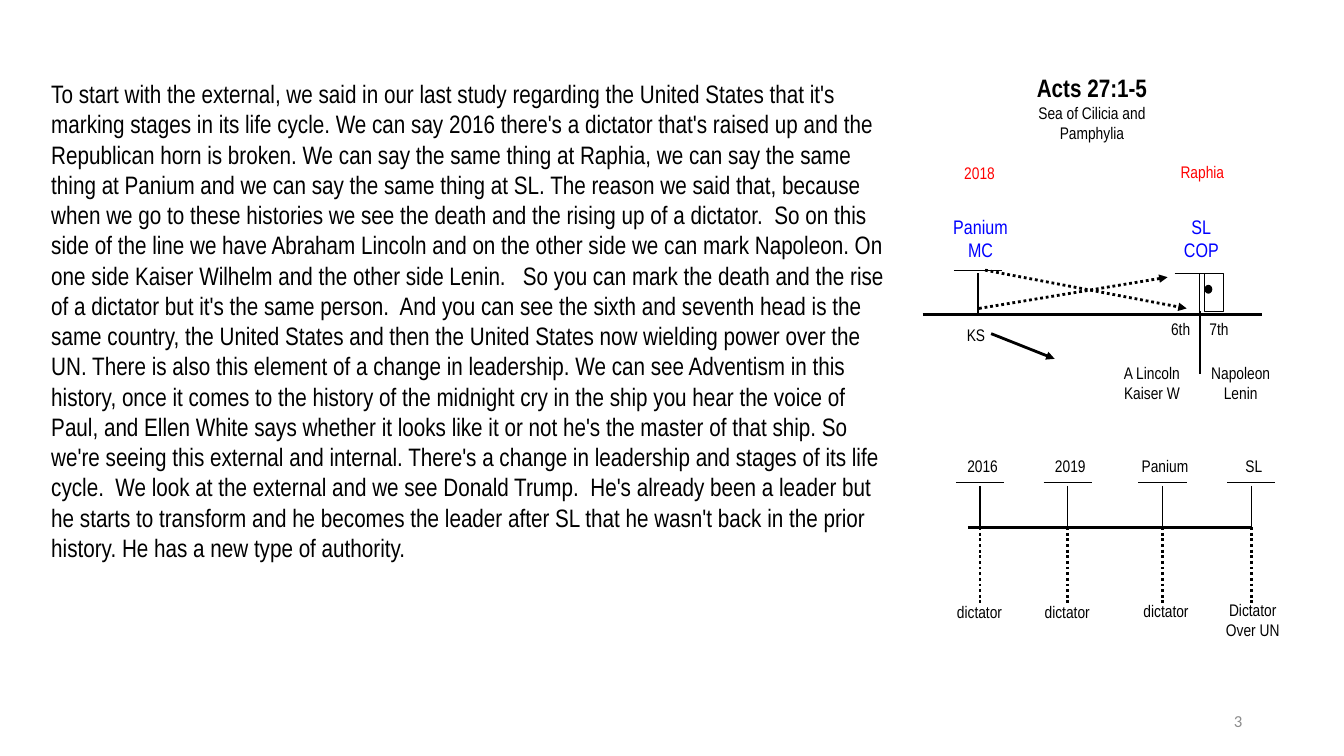
from lxml.etree import SubElement
from pptx import Presentation
from pptx.dml.color import RGBColor
from pptx.enum.dml import MSO_LINE
from pptx.enum.shapes import MSO_CONNECTOR, MSO_SHAPE
from pptx.enum.text import MSO_ANCHOR, PP_ALIGN
from pptx.oxml.ns import qn
from pptx.util import Inches, Pt

# Content
BODY = [
    "To start with the external, we said in our last study regarding the United States that it's",
    "marking stages in its life cycle. We can say 2016 there's a dictator that's raised up and the",
    "Republican horn is broken. We can say the same thing at Raphia, we can say the same thing at",
    "Panium and we can say the same thing at SL. The reason we said that, because when we go to",
    "these histories we see the death and the rising up of a dictator.  So on this side of the line",
    "we have Abraham Lincoln and on the other side we can mark Napoleon. On one side Kaiser Wilhelm",
    "and the other side Lenin.   So you can mark the death and the rise of a dictator but it's the",
    "same person.  And you can see the sixth and seventh head is the same country, the United States",
    "and then the United States now wielding power over the UN. There is also this element of a",
    "change in leadership. We can see Adventism in this history, once it comes to the history of the",
    "midnight cry in the ship you hear the voice of Paul, and Ellen White says whether it looks like",
    "it or not he's the master of that ship. So we're seeing this external and internal. There's a",
    "change in leadership and stages of its life cycle.  We look at the external and we see Donald",
    "Trump.  He's already been a leader but he starts to transform and he becomes the leader after",
    "SL that he wasn't back in the prior history. He has a new type of authority.",
]
HEADING = "Acts 27:1-5\nSea of Cilicia and Pamphylia"
PAGE_NUMBER = "3"

# Upper diagram labels: text, left, top, width, height, colour, size
UPPER_LABELS = [
    ("Panium\nMC", 9.38, 2.09, 0.69, 0.56, "blue", "large"),
    ("SL\nCOP", 11.57, 2.09, 0.69, 0.56, "blue", "large"),
    ("2018", 9.37, 1.57, 0.69, 0.5, "red", "small"),
    ("Raphia", 11.58, 1.56, 0.69, 0.5, "red", "small"),
    ("KS", 9.46, 3.18, 0.44, 0.25, "black", "small"),
    ("6th", 11.52, 3.12, 0.38, 0.31, "black", "small"),
    ("7th", 11.9, 3.12, 0.38, 0.31, "black", "small"),
    ("A Lincoln\nKaiser W", 11.08, 3.56, 0.69, 0.5, "black", "small"),
    ("Napoleon\nLenin", 11.96, 3.56, 0.69, 0.5, "black", "small"),
]
# Waymarks: stem x, centre of the bar, bar y
UPPER_WAYMARKS = [(9.7, 9.7, 2.68), (11.9, 11.89, 2.71)]
# Lower waymarks: stem x, label above, label below, left and top of label below
LOWER_WAYMARKS = [
    (9.72, "2016", "dictator", 9.37, 5.93),
    (10.59, "2019", "dictator", 10.24, 5.93),
    (11.53, "Panium", "dictator", 11.22, 5.92),
    (12.41, "SL", "Dictator\nOver UN", 12.08, 5.91),
]

THEME = {
    "font": "Arial Narrow", "number_font": "Calibri",
    "black": "000000", "blue": "0000FF", "red": "FF0000", "gray": "8C8C8C",
    "body": 18, "heading": 18, "large": 14, "small": 12,
    "hairline": 0.25, "thin": 0.75, "medium": 1, "thick": 2,
}
UPPER_AXIS, LOWER_AXIS = 3.12, 5.23
BAR, LABEL_WIDTH = 0.48, 0.69


def color(name):
    return RGBColor.from_string(THEME[name])


def add_text(slide, text, left, top, width, height, *, size="small", tint="black",
             font="font", align=PP_ALIGN.CENTER, anchor=MSO_ANCHOR.TOP,
             inset=(0.04, 0.04), heading=False):
    """Add a text box; with heading=True the first line is bold and larger."""
    box = slide.shapes.add_textbox(Inches(left), Inches(top), Inches(width), Inches(height))
    frame = box.text_frame
    frame.word_wrap = True
    frame.vertical_anchor = anchor
    frame.margin_left = frame.margin_right = Inches(inset[0])
    frame.margin_top = frame.margin_bottom = Inches(inset[1])
    frame.text = text
    for index, paragraph in enumerate(frame.paragraphs):
        first = heading and index == 0
        paragraph.alignment = align
        for run in paragraph.runs:
            run.font.name = THEME[font]
            run.font.size = Pt(THEME["heading" if first else size])
            run.font.bold = first
            run.font.color.rgb = color(tint)


def add_line(slide, start, end, *, weight="thin", dotted=False, arrow=False):
    line = slide.shapes.add_connector(
        MSO_CONNECTOR.STRAIGHT, *(Inches(value) for value in (*start, *end)))
    line.line.color.rgb = color("black")
    line.line.width = Pt(THEME[weight])
    if dotted:
        line.line.dash_style = MSO_LINE.ROUND_DOT
    if arrow:
        SubElement(line._element.spPr.find(qn("a:ln")), qn("a:tailEnd"), type="triangle")
    SubElement(line._element.spPr, qn("a:effectLst"))


def add_outline(slide, preset, left, top, width, height, *, weight, filled=False):
    shape = slide.shapes.add_shape(
        preset, Inches(left), Inches(top), Inches(width), Inches(height))
    shape.shadow.inherit = False
    if filled:
        shape.fill.solid()
        shape.fill.fore_color.rgb = color("black")
    else:
        shape.fill.background()
    shape.line.color.rgb = color("black")
    shape.line.width = Pt(THEME[weight])


def add_bar(slide, center, y):
    add_line(slide, (center - BAR / 2, y), (center + BAR / 2, y))


def add_upper_diagram(slide):
    add_text(slide, HEADING, 9.99, 0.68, 1.68, 0.88, heading=True)
    for text, left, top, width, height, tint, size in UPPER_LABELS:
        add_text(slide, text, left, top, width, height, tint=tint, size=size)
    for x, center, bar_y in UPPER_WAYMARKS:
        add_line(slide, (x, 2.71), (x, UPPER_AXIS))
        add_bar(slide, center, bar_y)

    # Door with its knob
    add_outline(slide, MSO_SHAPE.RECTANGLE, 11.94, 2.71, 0.19, 0.38, weight="hairline")
    add_outline(slide, MSO_SHAPE.OVAL, 11.96, 2.84, 0.05, 0.06, weight="thick", filled=True)

    # Axis, crossing arrows and divider
    add_line(slide, (9.15, UPPER_AXIS), (12.52, UPPER_AXIS), weight="thick")
    add_line(slide, (9.71, 3.06), (11.58, 2.75), weight="thick", dotted=True, arrow=True)
    add_line(slide, (9.77, 2.68), (11.77, 3.06), weight="thick", dotted=True, arrow=True)
    add_line(slide, (9.83, 3.31), (10.46, 3.56), weight="thick", arrow=True)
    add_line(slide, (11.9, 3.09), (11.9, 3.71), weight="medium")


def add_lower_diagram(slide):
    add_line(slide, (9.6, LOWER_AXIS), (12.42, LOWER_AXIS), weight="thick")
    for x, above, below, below_left, below_top in LOWER_WAYMARKS:
        add_text(slide, above, x - 0.32, 4.48, LABEL_WIDTH, 0.28)
        add_bar(slide, x, 4.79)
        add_line(slide, (x, 4.82), (x, LOWER_AXIS))
        add_line(slide, (x, LOWER_AXIS), (x, 5.98), weight="thick", dotted=True)
        add_text(slide, below, below_left, below_top, LABEL_WIDTH, 0.5)


def main():
    presentation = Presentation()
    presentation.slide_width, presentation.slide_height = Inches(13.33), Inches(7.5)
    slide = presentation.slides.add_slide(presentation.slide_layouts[6])

    # Page number and body text
    add_text(slide, PAGE_NUMBER, 9.42, 6.95, 3, 0.4, tint="gray", font="number_font",
             align=PP_ALIGN.RIGHT, anchor=MSO_ANCHOR.MIDDLE, inset=(0.1, 0.05))
    add_text(slide, " ".join(BODY), 0.41, 0.73, 8.59, 5.25, size="body",
             align=PP_ALIGN.LEFT, inset=(0.1, 0.05))

    add_upper_diagram(slide)
    add_lower_diagram(slide)
    presentation.save("out.pptx")


if __name__ == "__main__":
    main()
